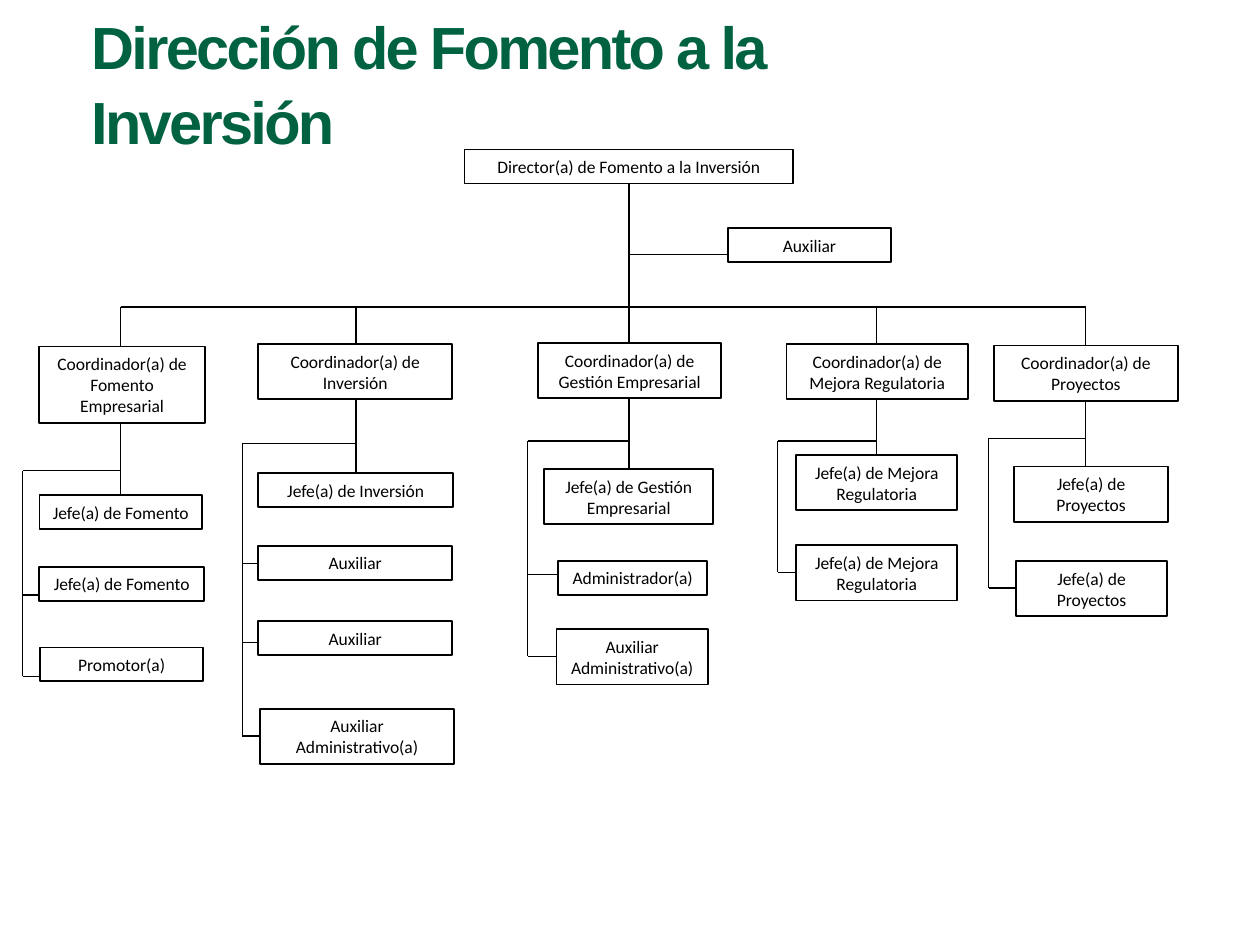
import pptx
import pptx.util
import pptx.dml.color
import pptx.enum.shapes
import pptx.enum.text
import lxml.etree

Pt = pptx.util.Pt
ALIGN = pptx.enum.text.PP_ALIGN
ANCHOR = pptx.enum.text.MSO_ANCHOR

# Content: boxes are (text, left, top, width, number of text lines)
TITLE = "Dirección de Fomento a la Inversión"
DIRECTOR = ("Director(a) de Fomento a la Inversión", 265.5, 85.5, 187.5, 1)
ASSISTANT = ("Auxiliar", 416, 130.5, 93, 1)
DIRECTOR_X, ASSISTANT_Y, BUS_Y = 359.5, 145.5, 175.5

# The trunk runs down to the first staff box; a side rail reaches the others at "ticks"
BRANCHES = [
    dict(trunk=69, rail=13, elbow=269, ticks=[340, 386.5],
         coordinator=("Coordinador(a) de Fomento Empresarial", 22.5, 198, 94.5, 3),
         staff=[("Jefe(a) de Fomento", 22.5, 283, 93, 1),
                ("Jefe(a) de Fomento", 22.5, 324, 94, 1),
                ("Promotor(a)", 23, 370, 93, 1)]),
    dict(trunk=203.5, rail=138.5, elbow=253.5, ticks=[322, 367, 420.5],
         coordinator=("Coordinador(a) de Inversión", 147.5, 196.5, 111, 2),
         staff=[("Jefe(a) de Inversión", 147.5, 270.5, 111.5, 1),
                ("Auxiliar", 147.5, 312, 111, 1),
                ("Auxiliar", 147.5, 355, 111, 1),
                ("Auxiliar Administrativo(a)", 148.5, 405, 111, 2)]),
    dict(trunk=359.5, rail=301.5, elbow=252, ticks=[328.5, 375],
         coordinator=("Coordinador(a) de Gestión Empresarial", 307.5, 196, 104.5, 2),
         staff=[("Jefe(a) de Gestión Empresarial", 311, 268, 96.5, 2),
                ("Administrador(a)", 319, 320.5, 85, 1),
                ("Auxiliar Administrativo(a)", 318, 359.5, 86.5, 2)]),
    dict(trunk=501, rail=444.5, elbow=252, ticks=[327],
         coordinator=("Coordinador(a) de Mejora Regulatoria", 449.5, 196.5, 103.5, 2),
         staff=[("Jefe(a) de Mejora Regulatoria", 455, 260, 92, 2),
                ("Jefe(a) de Mejora Regulatoria", 455, 311.5, 92, 2)]),
    dict(trunk=620.5, rail=565, elbow=250.5, ticks=[336],
         coordinator=("Coordinador(a) de Proyectos", 568, 197.5, 105, 2),
         staff=[("Jefe(a) de Proyectos", 579.5, 266.5, 88, 2),
                ("Jefe(a) de Proyectos", 580.5, 320.5, 86.5, 2)]),
]

presentation = pptx.Presentation()
presentation.slide_width, presentation.slide_height = Pt(720), Pt(540)
slide = presentation.slides.add_slide(presentation.slide_layouts[6])


def color(hex_value):
    return pptx.dml.color.RGBColor.from_string(hex_value)


def write(shape, text, size=10, font="Calibri", hex_value="000000", bold=False,
          align=ALIGN.CENTER, anchor=ANCHOR.MIDDLE, line_spacing=None, tracking=None):
    frame = shape.text_frame
    frame.word_wrap = True
    frame.auto_size = pptx.enum.text.MSO_AUTO_SIZE.SHAPE_TO_FIT_TEXT
    frame.vertical_anchor = anchor
    paragraph = frame.paragraphs[0]
    paragraph.alignment = align
    paragraph.line_spacing = line_spacing
    run = paragraph.add_run()
    run.text = text
    run.font.size, run.font.name, run.font.bold = Pt(size), font, bold
    run.font.color.rgb = color(hex_value)
    if tracking is not None:
        run.font._element.set("spc", str(int(tracking * 100)))


def box_height(lines):
    return 7.2 + 12.2 * lines


def add_box(box):
    text, left, top, width, lines = box
    shape = slide.shapes.add_shape(
        pptx.enum.shapes.MSO_SHAPE.RECTANGLE,
        Pt(left), Pt(top), Pt(width), Pt(box_height(lines)))
    shape.shadow.inherit = False
    shape.fill.background()
    shape.line.color.rgb = color("000000")
    shape.line.width = Pt(1)
    write(shape, text)


def add_line(x1, y1, x2, y2):
    line = slide.shapes.add_connector(
        pptx.enum.shapes.MSO_CONNECTOR.STRAIGHT, Pt(x1), Pt(y1), Pt(x2), Pt(y2))
    line.line.color.rgb = color("000000")
    line.line.width = Pt(0.75)
    lxml.etree.SubElement(line._element.spPr, pptx.oxml.ns.qn("a:effectLst"))


# Title
title = slide.shapes.add_textbox(Pt(45), Pt(0), Pt(531), Pt(90))
write(title, TITLE, size=34, font="Arial", hex_value="006241", bold=True,
      align=ALIGN.LEFT, anchor=ANCHOR.TOP, line_spacing=1.05, tracking=-1.5)

# Director, assistant and the line across all branches
add_box(DIRECTOR)
add_box(ASSISTANT)
add_line(DIRECTOR_X, DIRECTOR[2] + box_height(DIRECTOR[4]), DIRECTOR_X, BUS_Y)
add_line(DIRECTOR_X, ASSISTANT_Y, ASSISTANT[1], ASSISTANT_Y)
add_line(BRANCHES[0]["trunk"], BUS_Y, BRANCHES[-1]["trunk"], BUS_Y)

# Branches
for branch in BRANCHES:
    trunk, rail, elbow = branch["trunk"], branch["rail"], branch["elbow"]
    coordinator, staff, ticks = branch["coordinator"], branch["staff"], branch["ticks"]
    for box in [coordinator] + staff:
        add_box(box)
    add_line(trunk, BUS_Y, trunk, coordinator[2])
    add_line(trunk, coordinator[2] + box_height(coordinator[4]), trunk, staff[0][2])
    add_line(rail, elbow, trunk, elbow)
    add_line(rail, elbow, rail, ticks[-1])
    for box, tick in zip(staff[1:], ticks):
        add_line(rail, tick, box[1], tick)

presentation.save("out.pptx")
